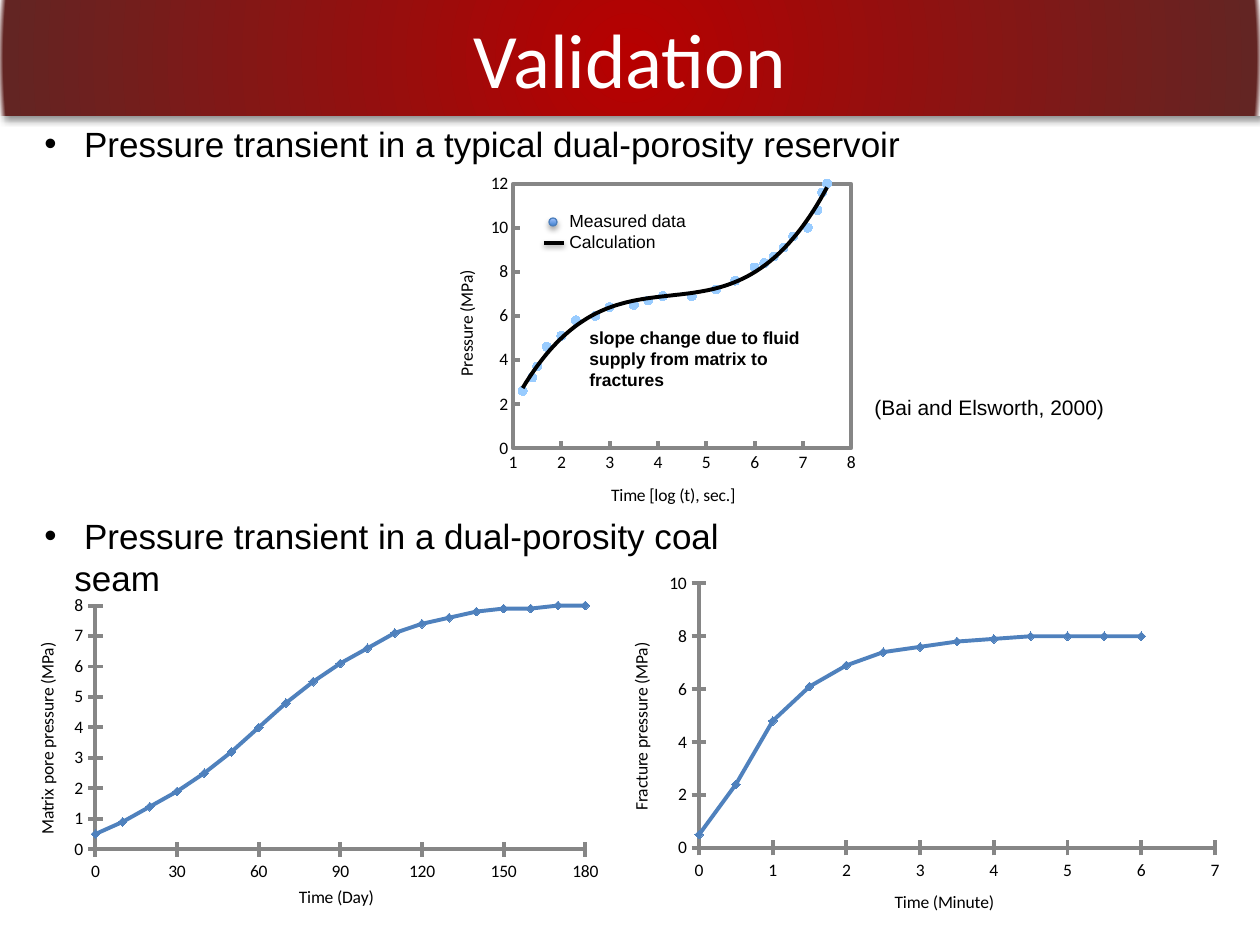
from lxml import etree
from pptx import Presentation
from pptx import util as u
from pptx.chart.data import XyChartData
from pptx.dml.color import RGBColor
from pptx.enum import chart as c, shapes, text
from pptx.oxml.ns import qn

SCALE = 914400 / 126
NAMESPACES = ('xmlns:a="http://schemas.openxmlformats.org/drawingml/2006/main" '
              'xmlns:c="http://schemas.openxmlformats.org/drawingml/2006/chart"')
SHADOW = ('<a:outerShdw {} blurRad="{}" dist="{}" dir="{}" rotWithShape="0">'
          '<a:srgbClr val="000000"><a:alpha val="{}"/></a:srgbClr></a:outerShdw>')
color = RGBColor.from_string


def px(*lengths):
    return [u.Emu(round(length * SCALE)) for length in lengths]


def add_text(slide, box, lines, size, bold=False, bullet=False):
    frame = slide.shapes.add_textbox(*px(*box)).text_frame
    frame.word_wrap = True
    for number, line in enumerate(lines):
        paragraph = frame.add_paragraph() if number else frame.paragraphs[0]
        if bullet:
            properties = paragraph._p.get_or_add_pPr()
            indent = px(30)[0]
            properties.set("marL", str(indent))
            properties.set("indent", str(-indent))
            etree.SubElement(properties, qn("a:buFont"), typeface="Arial")
            etree.SubElement(properties, qn("a:buChar"), char="•")
        run = paragraph.add_run()
        run.text = line
        run.font.name, run.font.size, run.font.bold = "Arial", u.Pt(size), bold
        run.font.color.rgb = color("000000")


presentation = Presentation()
presentation.slide_width, presentation.slide_height = px(1260, 945)
slide = presentation.slides.add_slide(presentation.slide_layouts[6])

# Title band with a radial gradient
band = slide.shapes.add_shape(shapes.MSO_SHAPE.RECTANGLE, *px(0, 0, 1260, 116))
stops = "".join(f'<a:gs pos="{position}000"><a:srgbClr val="{shade}"/></a:gs>'
                for position, shade in ((0, "B70000"), (99, "632523"), (100, "FFFFFF")))
gradient = etree.fromstring(
    f'<a:gradFill {NAMESPACES} rotWithShape="1"><a:gsLst>{stops}</a:gsLst><a:path path="circle">'
    '<a:fillToRect l="50000" t="50000" r="50000" b="50000"/></a:path></a:gradFill>')
band._element.spPr.find(qn("a:prstGeom")).addnext(gradient)
band.line.fill.background()
band.shadow.inherit = False
band._element.spPr.find(qn("a:effectLst")).append(etree.fromstring(
    SHADOW.format(NAMESPACES, u.Pt(4), u.Pt(3), 45 * 60000, 43000)))
band.text_frame.vertical_anchor = text.MSO_ANCHOR.MIDDLE
paragraph = band.text_frame.paragraphs[0]
paragraph.alignment = text.PP_ALIGN.CENTER
run = paragraph.add_run()
run.text = "Validation"
run.font.name, run.font.size = "Calibri", u.Pt(44)
run.font.color.rgb = color("FFFFFF")

# Charts: measured points with a fitted curve, then two smooth curves
charts = [
    dict(box=(451, 152, 431, 378), plot=(0.144, 0.084, 0.785, 0.7), fitted=True,
         titles=("Time [log (t), sec.]", "Pressure (MPa)"),
         ranges=((1, 8, 1), (0, 12, 2)), format="General",
         x=[1.2, 1.4, 1.5, 1.7, 2, 2.3, 2.7, 3, 3.5, 3.8, 4.1, 4.7, 5.2, 5.6, 6, 6.2,
            6.4, 6.6, 6.8, 7.1, 7.3, 7.4, 7.5],
         y=[2.6, 3.2, 3.7, 4.6, 5.1, 5.8, 6, 6.4, 6.5, 6.7, 6.9, 6.9, 7.2, 7.6, 8.2, 8.4,
            8.7, 9.1, 9.6, 10, 10.8, 11.6, 12]),
    dict(box=(32, 577, 577, 336), plot=(0.11, 0.085, 0.849, 0.726), fitted=False,
         titles=("Time (Day)", "Matrix pore pressure (MPa)"),
         ranges=((0, 180, 30), (0, 8, 1)), format="0",
         x=range(0, 181, 10),
         y=[0.5, 0.9, 1.4, 1.9, 2.5, 3.2, 4, 4.8, 5.5, 6.1, 6.6, 7.1, 7.4, 7.6, 7.8, 7.9,
            7.9, 8, 8]),
    dict(box=(609, 557, 630, 378), plot=(0.143, 0.07, 0.819, 0.7), fitted=False,
         titles=("Time (Minute)", "Fracture pressure (MPa)"),
         ranges=((0, 7, 1), (0, 10, 2)), format="0",
         x=[step / 2 for step in range(13)],
         y=[0.5, 2.4, 4.8, 6.1, 6.9, 7.4, 7.6, 7.8, 7.9, 8, 8, 8, 8]),
]
for item in charts:
    fitted = item["fitted"]
    data = XyChartData()
    points = data.add_series("Series 1")
    for x, y in zip(item["x"], item["y"]):
        points.add_data_point(x, y)
    kind = c.XL_CHART_TYPE.XY_SCATTER if fitted else c.XL_CHART_TYPE.XY_SCATTER_SMOOTH
    chart = slide.shapes.add_chart(kind, *px(*item["box"]), data).chart
    chart.has_legend = chart.has_title = False
    chart.font.name, chart.font.size = "Calibri", u.Pt(10)
    chart.font.color.rgb = color("000000")
    chart.plots[0].vary_by_categories = False

    # Axes
    for axis, title, (low, high, step) in zip(
            (chart.category_axis, chart.value_axis), item["titles"], item["ranges"]):
        axis.has_major_gridlines = False
        axis.minimum_scale, axis.maximum_scale, axis.major_unit = low, high, step
        axis.major_tick_mark = c.XL_TICK_MARK.INSIDE if fitted else c.XL_TICK_MARK.CROSS
        axis.minor_tick_mark = c.XL_TICK_MARK.NONE
        axis.format.line.color.rgb = color("868686")
        axis.format.line.width = u.Pt(2.25)
        run = axis.axis_title.text_frame.paragraphs[0].add_run()
        run.text = title
        run.font.name, run.font.size, run.font.bold = "Calibri", u.Pt(10), False
        run.font.color.rgb = color("000000")
    chart.value_axis.tick_labels.number_format = item["format"]
    chart.value_axis.tick_labels.number_format_is_linked = False

    # Plot area position
    area = chart._chartSpace.chart.plotArea
    for layout in area.findall(qn("c:layout")):
        area.remove(layout)
    sizes = "".join(f'<c:{name} val="{value}"/>' for name, value in zip("xywh", item["plot"]))
    area.insert(0, etree.fromstring(
        f'<c:layout {NAMESPACES}><c:manualLayout><c:layoutTarget val="inner"/>'
        f'<c:xMode val="edge"/><c:yMode val="edge"/>{sizes}</c:manualLayout></c:layout>'))

    # Series, with a cubic trend line and a frame on the fitted chart
    series = chart.plots[0].series[0]
    series.smooth = not fitted
    marker = series.marker
    marker.style = c.XL_MARKER_STYLE.CIRCLE if fitted else c.XL_MARKER_STYLE.DIAMOND
    marker.size = 5
    shade = color("99CCFF" if fitted else "4F81BD")
    marker.format.fill.solid()
    marker.format.fill.fore_color.rgb = shade
    marker.format.line.color.rgb = shade
    if fitted:
        series.format.line.fill.background()
        series._element.find(qn("c:xVal")).addprevious(etree.fromstring(
            f'<c:trendline {NAMESPACES}><c:spPr><a:ln w="{u.Pt(2.25)}"><a:solidFill>'
            '<a:srgbClr val="000000"/></a:solidFill></a:ln></c:spPr>'
            '<c:trendlineType val="poly"/><c:order val="3"/>'
            '<c:dispRSqr val="0"/><c:dispEq val="0"/></c:trendline>'))
        area.append(etree.fromstring(
            f'<c:spPr {NAMESPACES}><a:noFill/><a:ln w="{u.Pt(2.25)}"><a:solidFill>'
            '<a:srgbClr val="868686"/></a:solidFill></a:ln></c:spPr>'))
    else:
        series.format.line.color.rgb = shade
        series.format.line.width = u.Pt(2.25)

# Bullets, citation, key labels and remark
add_text(slide, (32, 116, 1176, 55), ["\u0020Pressure transient in a typical dual-porosity reservoir"],
         20, bullet=True)
add_text(slide, (32, 508, 788, 55), [" Pressure transient in a dual-porosity coal seam"],
         20, bullet=True)
add_text(slide, (862, 388, 261, 38), ["(Bai and Elsworth, 2000)"], 12)
add_text(slide, (557, 204, 158, 55), ["Measured data", "Calculation"], 10)
add_text(slide, (577, 321, 273, 77),
         ["slope change due to fluid supply from matrix to fractures"], 10, bold=True)

# Key symbols
dot = slide.shapes.add_shape(shapes.MSO_SHAPE.OVAL, *px(549, 218, 8, 8))
dot.fill.gradient()
dot.fill.gradient_angle = 90
for stop, shade in zip(dot.fill.gradient_stops, ("3F80CE", "A4C4FF")):
    stop.color.rgb = color(shade)
dot.line.color.rgb = color("4B7EBC")
dot.line.width = u.Pt(0.75)
dot.shadow.inherit = False
dash = slide.shapes.add_connector(shapes.MSO_CONNECTOR.STRAIGHT, *px(544, 243, 564, 243))
dash.line.color.rgb = color("000000")
dash.line.width = u.Pt(2)
etree.SubElement(dash._element.spPr, qn("a:effectLst"))
for symbol, distance, alpha in ((dot, 1.8, 35000), (dash, 1.6, 38000)):
    symbol._element.spPr.find(qn("a:effectLst")).append(etree.fromstring(
        SHADOW.format(NAMESPACES, u.Pt(3.1), u.Pt(distance), 90 * 60000, alpha)))

presentation.save("out.pptx")
